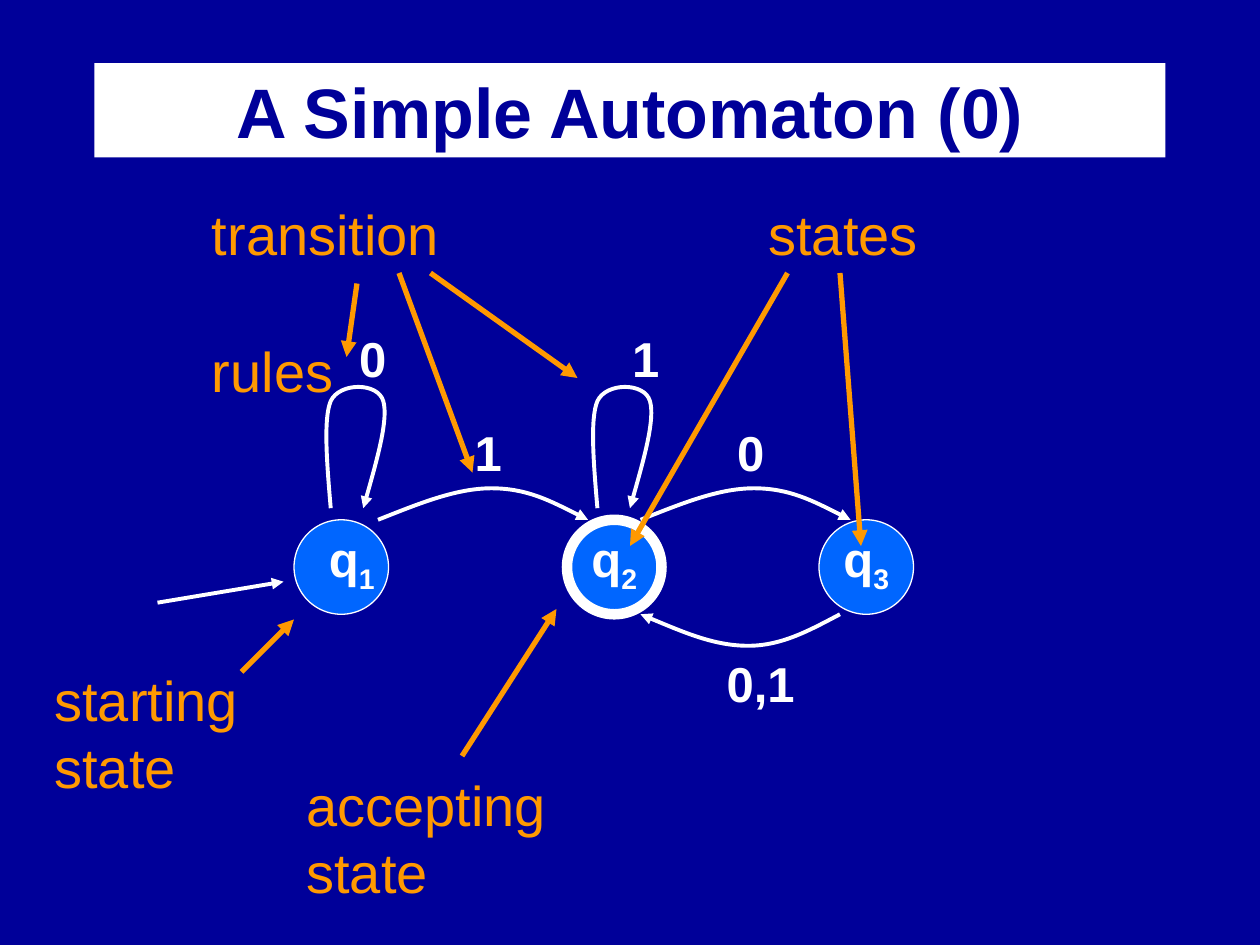
from dataclasses import dataclass

from lxml import etree
from pptx import Presentation
from pptx.dml.color import RGBColor
from pptx.enum.shapes import MSO_CONNECTOR, MSO_SHAPE
from pptx.enum.text import MSO_ANCHOR, PP_ALIGN
from pptx.oxml.ns import qn
from pptx.util import Inches, Pt

RECT, OVAL = MSO_SHAPE.RECTANGLE, MSO_SHAPE.OVAL
LINE = MSO_CONNECTOR.STRAIGHT
LEFT, MID = PP_ALIGN.LEFT, PP_ALIGN.CENTER
TOP, CORE = MSO_ANCHOR.TOP, MSO_ANCHOR.MIDDLE
COLS, ROWS = 120, 90
LOOP = [(0, 0), (-0.36, -4.2), (-0.72, -8.5), (0, -10.2), (0.84, -12),
        (4.5, -12), (5, -10.2), (5.5, -8.5), (4.3, -4.2), (3.1, 0)]
BOW = [(0, 0), (0.19, 0.5), (0.37, 1), (0.54, 1), (0.71, 1), (0.85, 0.5), (1, 0)]


@dataclass(frozen=True)
class Theme:
    """Colours, type sizes and line widths of the slide."""
    font: str = "Arial"
    back: RGBColor = RGBColor(0x00, 0x00, 0x99)
    node: RGBColor = RGBColor(0x00, 0x66, 0xFF)
    ink: RGBColor = RGBColor(0xFF, 0xFF, 0xFF)
    note: RGBColor = RGBColor(0xFF, 0x99, 0x00)
    head: int = 40
    sign: int = 28
    text: int = 32
    thin: float = 0.75
    edge: float = 2.25
    hint: float = 3
    ring: float = 6


T = Theme()


def grid(*cells):
    """Turn grid counts (twelve to the inch) into lengths."""
    return [Inches(c / 12) for c in cells]


def apply(item, form):
    """Set each attribute named in a dict."""
    for name, value in form.items():
        setattr(item, name, value)


def write(frame, paras, size, color, bold=True, align=MID, wrap=False,
          anchor=TOP, gap=0):
    """Fill a text frame; each paragraph is a base and a subscript."""
    apply(frame, {"word_wrap": wrap, "vertical_anchor": anchor})
    for i, (base, sub) in enumerate(paras):
        para = frame.add_paragraph() if i else frame.paragraphs[0]
        apply(para, {"alignment": align, "space_before": Pt(gap if i else 0)})
        for j, part in enumerate((base, sub)):
            if part:
                run = para.add_run()
                run.text = part
                apply(run.font, {"name": T.font, "size": Pt(size), "bold": bold})
                run.font.color.rgb = color
                if j:
                    run.font._element.set("baseline", "-25000")


def label(slide, x, y, w, base, sub=""):
    """Add a bold sign of the diagram."""
    box = slide.shapes.add_textbox(*grid(x, y + 0.25, w, 6.8))
    write(box.text_frame, [(base, sub)], T.sign, T.ink)


def note(slide, x, y, w, *words, gap=0):
    """Add an orange remark that wraps in its box."""
    box = slide.shapes.add_textbox(*grid(x, y + 0.4, w, 7.6))
    write(box.text_frame, [(word, "") for word in words], T.text, T.note,
          bold=False, align=LEFT, wrap=True, gap=gap)


def stroke(line, color, width, end=None):
    """Style a line and give it an arrowhead at one end."""
    line.color.rgb = color
    line.width = Pt(width)
    if end:
        etree.SubElement(line._get_or_add_ln(), qn(f"a:{end}"), type="triangle")


def arrow(slide, ends, color, width):
    """Draw a straight arrow."""
    item = slide.shapes.add_connector(LINE, *grid(*ends))
    stroke(item.line, color, width, "tailEnd")
    etree.SubElement(item._element.spPr, qn("a:effectLst"))


def curve(slide, dots, end="tailEnd"):
    """Draw an arrow of cubic curves through start and triples of points."""
    spots = [grid(*dot) for dot in dots]
    form = slide.shapes.build_freeform(*spots[0])
    form.add_line_segments(spots[1:], close=False)
    item = form.convert_to_shape()
    legs = list(item._element.iter(qn("a:lnTo")))
    for i in range(0, len(legs), 3):
        bend = etree.Element(qn("a:cubicBezTo"))
        legs[i].addprevious(bend)
        for leg in legs[i:i + 3]:
            bend.append(leg[0])
            leg.getparent().remove(leg)
    item.fill.background()
    stroke(item.line, T.ink, T.edge, end)
    item.shadow.inherit = False


def loop(slide, x, sign, left):
    """Draw a transition from a state to itself."""
    curve(slide, [(x + dx, 48.4 + dy) for dx, dy in LOOP])
    label(slide, left, 30.4, 5, sign)


def bow(slide, x, y, w, rise, end="tailEnd"):
    """Draw a transition between neighbouring states."""
    curve(slide, [(x + w * dx, y + rise * dy) for dx, dy in BOW], end)


def state(slide, x, num, shift, width):
    """Draw a state as a named circle."""
    item = slide.shapes.add_shape(OVAL, *grid(x, 49.5, 9, 9))
    item.fill.solid()
    item.fill.fore_color.rgb = T.node
    stroke(item.line, T.ink, width)
    item.shadow.inherit = False
    label(slide, x + shift, 49.5, 7, "q", num)


def title(slide, words):
    """Draw the title bar."""
    item = slide.shapes.add_shape(RECT, *grid(9, 6, 102, 9))
    item.fill.solid()
    item.fill.fore_color.rgb = T.ink
    item.line.fill.background()
    item.shadow.inherit = False
    write(item.text_frame, [(words, "")], T.head, T.back, wrap=True, anchor=CORE)


def main():
    """Build the slide and save it."""
    deck = Presentation()
    deck.slide_width, deck.slide_height = grid(COLS, ROWS)
    slide = deck.slides.add_slide(deck.slide_layouts[6])
    slide.background.fill.solid()
    slide.background.fill.fore_color.rgb = T.back
    title(slide, "A Simple Automaton (0)")

    for x, num, shift, width in ((28, "1", 2, T.thin), (54, "2", 1, T.ring),
                                 (78, "3", 1, T.thin)):
        state(slide, x, num, shift, width)
    for x, sign, left in ((36, "1", 44), (61, "0", 69)):
        bow(slide, x, 49.5, 20, -3)
        label(slide, left, 39.4, 5, sign)
    bow(slide, 61, 58.5, 19, 3, "headEnd")
    label(slide, 68, 61.4, 8.9, "0,1")
    loop(slide, 31.5, "0", 33)
    loop(slide, 56.9, "1", 59)
    arrow(slide, (15, 57.4, 27, 55.4), T.ink, T.edge)

    note(slide, 72, 18, 17, "states")
    note(slide, 19, 18, 25.5, "transition", "rules", gap=40)
    note(slide, 4, 62.4, 24, "starting state")
    note(slide, 28, 72.4, 28, "accepting state")
    for ends in ((80, 26, 82, 52), (75, 26, 60, 52), (34, 27, 33, 34),
                 (38, 26, 45, 45), (41, 26, 55, 36), (23, 64, 28, 59),
                 (44, 72, 53, 58)):
        arrow(slide, ends, T.note, T.hint)
    deck.save("out.pptx")


if __name__ == "__main__":
    main()
